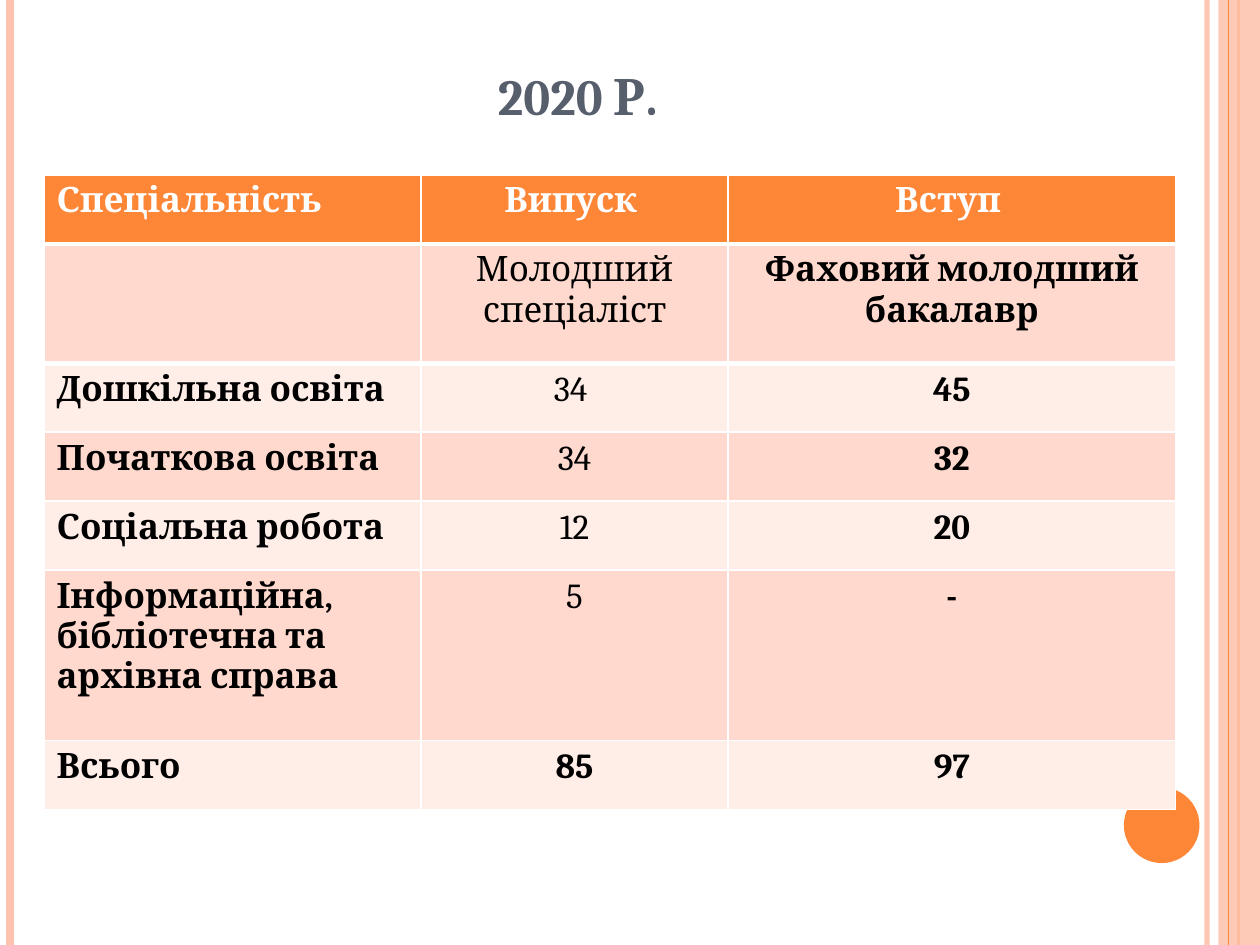
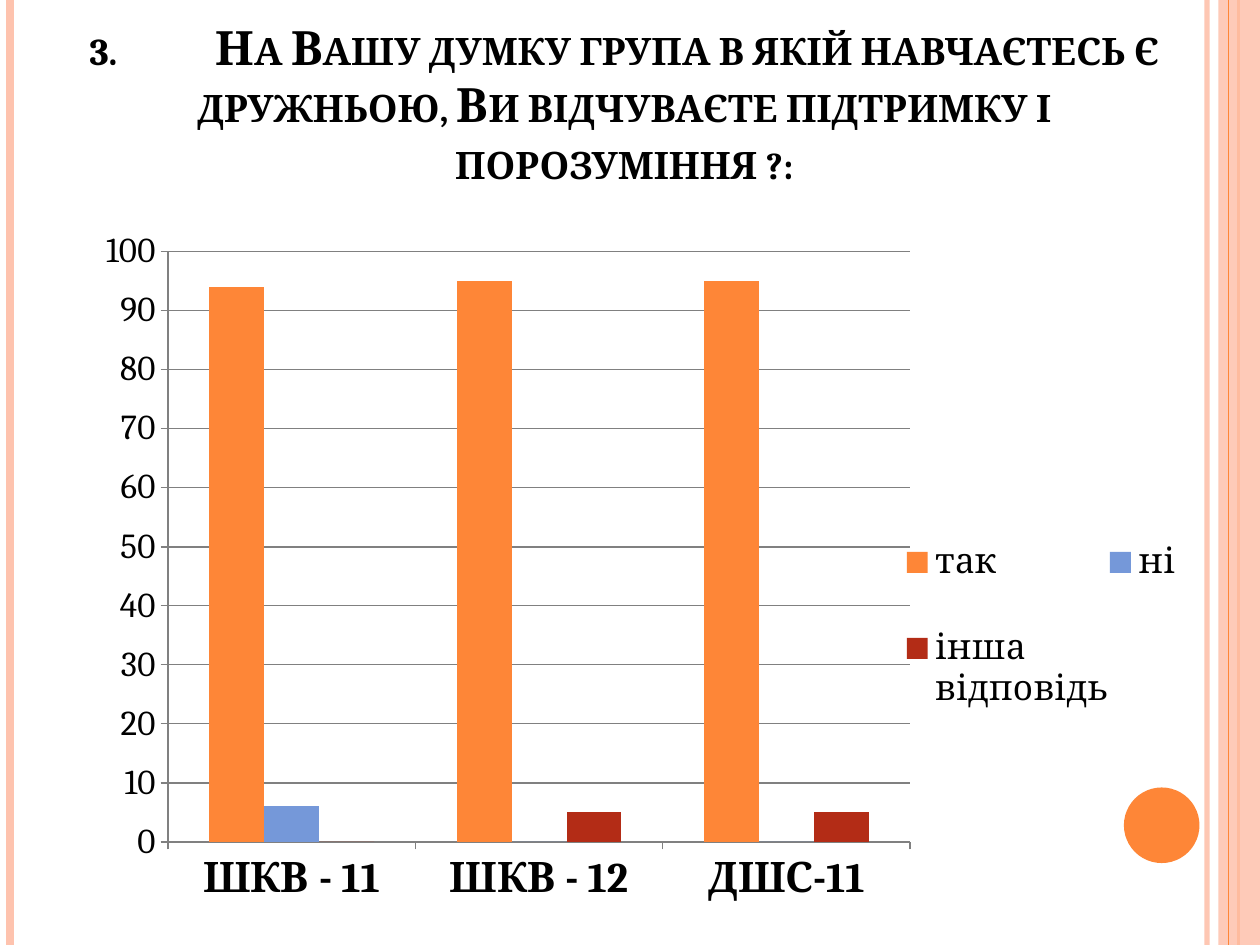
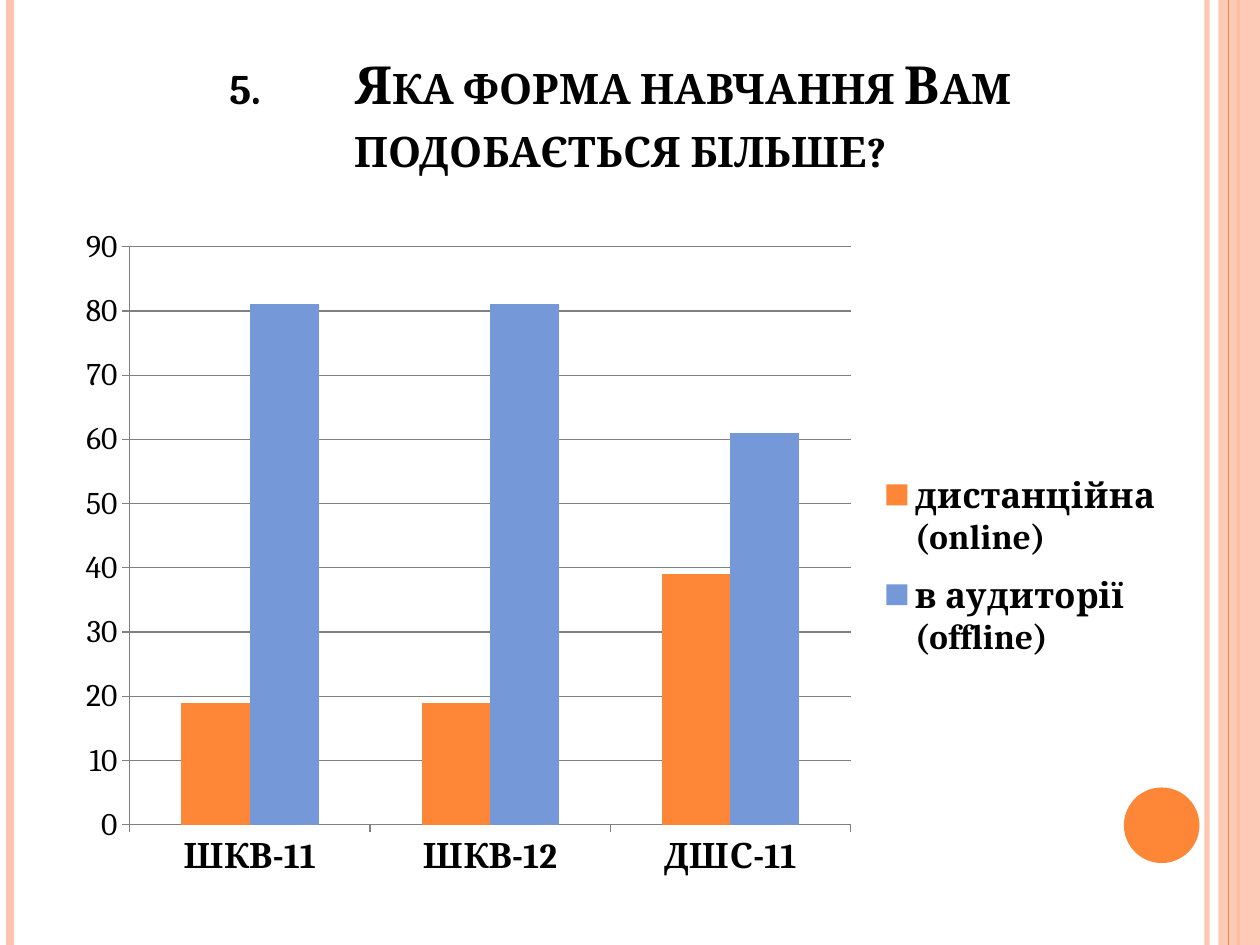
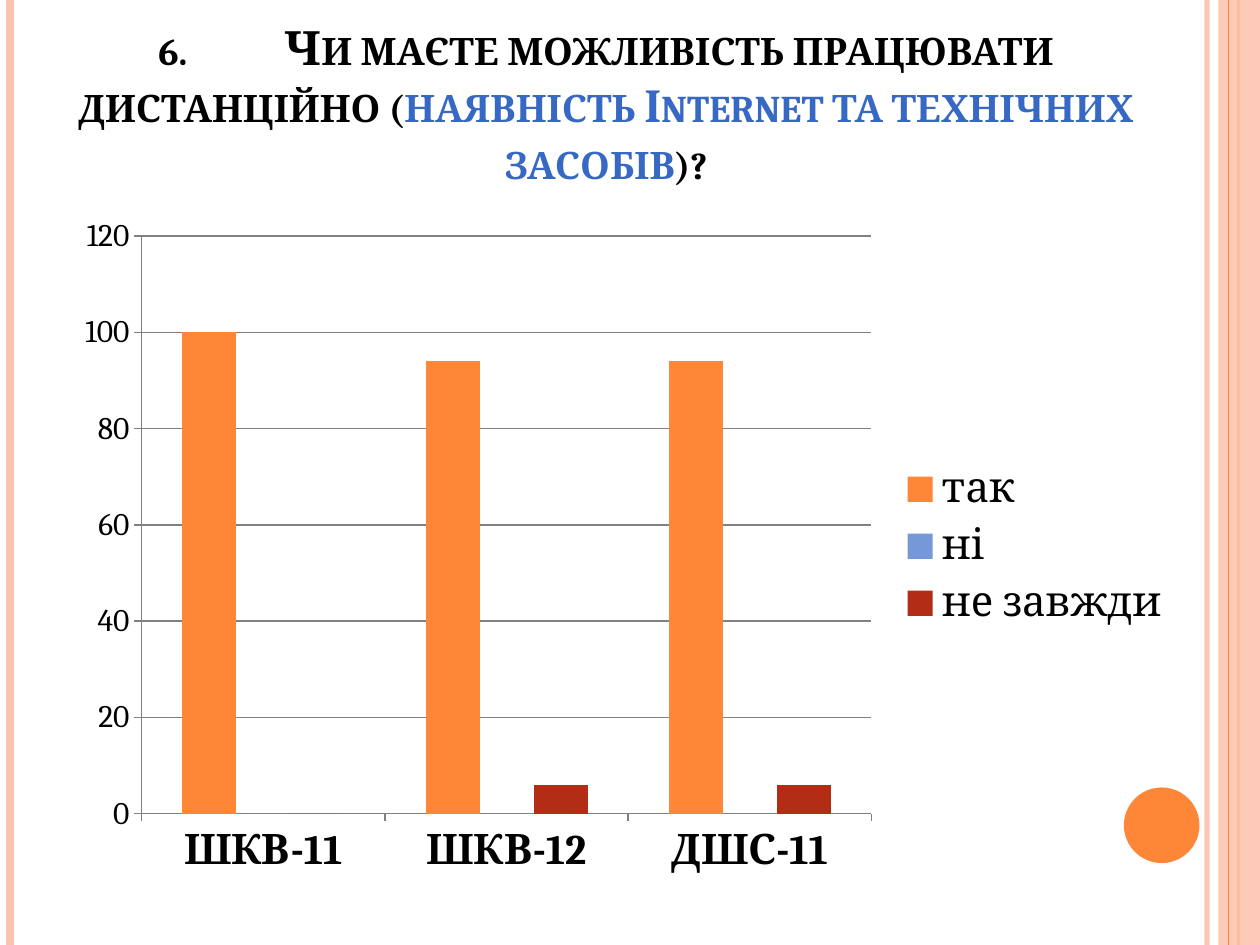
import pptx
import pptx.chart.data
import pptx.dml.color
import pptx.enum.chart
import pptx.enum.shapes
import pptx.enum.text
import pptx.oxml
import pptx.oxml.ns
import pptx.util

UNIT = pptx.util.Inches(0.1)
COLUMNS, ROWS = 100, 75
TITLE_TAB = 10
FONT = "Cambria"
ORANGE, PEACH, BLUE, RED = "FE8637", "FEC3AE", "7598D9", "B32C16"
SLATE, LINK, BLACK, WHITE, GREY = "575F6D", "3668C4", "000000", "FFFFFF", "808080"
BANDS = "FFEDE8", "FFD9CE"
CENTER = pptx.enum.text.PP_ALIGN.CENTER
LEFT = pptx.enum.text.PP_ALIGN.LEFT

RULES = [
    {"column": 95.8, "color": PEACH, "width": 3, "opacity": 93},
    {"column": 0.8, "color": PEACH, "width": 4.5, "opacity": 100},
    {"column": 98.3, "color": ORANGE, "width": 1.5, "opacity": 100},
    {"column": 97.5, "color": ORANGE, "width": 0.75, "opacity": 100},
]
BAND_BOX = (96.7, 0, 3.3, ROWS)
DISC_BOX = (89.2, 62.5, 6, 6)

TABLE_COLUMNS = [29.9, 24.4, 35.5]
TABLE_ROWS = [5.48, 9.45, 5.48, 5.48, 5.48, 13.5, 5.48]
ADMISSIONS = [
    ("Спеціальність", "Випуск ", "Вступ "),
    ("", "Молодший спеціаліст", "Фаховий молодший бакалавр"),
    ("Дошкільна освіта", "34 ", "45"),
    ("Початкова освіта", "34", "32"),
    ("Соціальна робота", "12", "20"),
    ("Інформаційна, бібліотечна та архівна справа", "5", "-"),
    ("Всього", "85", "97"),
]

SURVEYS = [
    {
        "title_box": (5, 2.1, 89.1, 13.4),
        "title_size": 27,
        "title": [("3.\tНа Вашу думку група в якій навчаєтесь є дружньою, "
                   "Ви відчуваєте підтримку і порозуміння ?:", BLACK)],
        "chart_box": (5.9, 17.8, 87.5, 54.6),
        "groups": ["ШКВ - 11", "ШКВ - 12", "ДШС-11"],
        "answers": [("так", (94, 95, 95)), ("ні", (6, 0, 0)),
                    ("інша відповідь", (0, 5, 5))],
        "scale": (100, 10),
        "sizes": {"value": 20, "category": 24, "legend": 20},
        "legend_bold": False,
        "plot_percent": (8.5, 4, 67.3, 85.8),
        "legend_percent": (75.4, 39.6, 24.8, 37.5),
    },
    {
        "title_box": (5.9, 2.1, 86.7, 12.5),
        "title_size": 30,
        "title": [("5.\tЯка форма навчання Вам подобається більше?", BLACK)],
        "chart_box": (5, 17, 88.3, 53.8),
        "groups": ["ШКВ-11", "ШКВ-12", "ДШС-11"],
        "answers": [("дистанційна (online)", (19, 19, 39)),
                    ("в аудиторії (offline)", (81, 81, 61))],
        "scale": (90, 10),
        "sizes": {"value": 18, "category": 20, "legend": 20},
        "legend_bold": True,
        "plot_percent": (6, 4.8, 64.8, 85.3),
        "legend_percent": (73.4, 36.1, 25.4, 32.2),
    },
    {
        "title_box": (2.8, 3, 90.6, 12.5),
        "title_size": 27,
        "title": [("6.\tЧи маєте можливість працювати дистанційно (", BLACK),
                  ("наявність Internet та технічних засобів", LINK),
                  (")?", BLACK)],
        "chart_box": (5, 16.2, 89.1, 54.3),
        "groups": ["ШКВ-11", "ШКВ-12", "ДШС-11"],
        "answers": [("так", (100, 94, 94)), ("ні", (0, 0, 0)),
                    ("не завжди", (0, 6, 6))],
        "scale": (120, 20),
        "sizes": {"value": 18, "category": 24, "legend": 24},
        "legend_bold": False,
    },
]


def rgb(color):
    """Turn a hex string into a colour."""
    return pptx.dml.color.RGBColor.from_string(color)


def grid(*lengths):
    """Turn counts of grid units into slide lengths."""
    return [round(length * UNIT) for length in lengths]


def assign(target, values):
    """Set every attribute named in a dict."""
    for name, value in values.items():
        setattr(target, name, value)


def add_element(parent, tag, index=None, **values):
    """Insert a new XML element with attributes and return it."""
    child = parent.makeelement(pptx.oxml.ns.qn(tag),
                               {name: str(value) for name, value in values.items()})
    parent.insert(len(parent) if index is None else index, child)
    return child


def format_font(font, size, color=BLACK, bold=False):
    """Give a font the deck's face with a size, colour and weight."""
    assign(font, {"name": FONT, "size": pptx.util.Pt(size), "bold": bold})
    font.color.rgb = rgb(color)


def set_opacity(shape, percent):
    """Make the colours of a shape partly transparent."""
    for color in list(shape.element.spPr.iter(pptx.oxml.ns.qn("a:srgbClr"))):
        add_element(color, "a:alpha", val=percent * 1000)


def add_rule(page, column, color, width, opacity):
    """Draw one full-height vertical rule."""
    rule = page.shapes.add_connector(
        pptx.enum.shapes.MSO_CONNECTOR.STRAIGHT, *grid(column, 0, column, ROWS))
    rule.line.color.rgb = rgb(color)
    rule.line.width = pptx.util.Pt(width)
    add_element(rule.element.spPr, "a:effectLst")
    if opacity < 100:
        set_opacity(rule, opacity)
    return rule


def add_solid(page, kind, box, color):
    """Draw a plain filled shape without outline."""
    solid = page.shapes.add_shape(kind, *grid(*box))
    solid.shadow.inherit = False
    solid.fill.solid()
    solid.fill.fore_color.rgb = rgb(color)
    solid.line.fill.background()
    return solid


def decorate_layout(layout, page):
    """Draw the rules, band and disc on a page and move them to its layout."""
    rules = [add_rule(page, **rule) for rule in RULES]
    band = add_solid(page, pptx.enum.shapes.MSO_SHAPE.RECTANGLE, BAND_BOX, PEACH)
    set_opacity(band, 87)
    disc = add_solid(page, pptx.enum.shapes.MSO_SHAPE.OVAL, DISC_BOX, ORANGE)
    for part in (*rules[:3], band, rules[3], disc):
        layout.shapes.element.append(part.element)


def clear_footers(layout):
    """Remove every layout placeholder except the title."""
    for holder in list(layout.placeholders):
        if holder.placeholder_format.idx:
            holder.element.getparent().remove(holder.element)


def fill_title(page, box, spans, size):
    """Write the title in small capitals with a tab after its number."""
    title = page.shapes.title
    assign(title, dict(zip(("left", "top", "width", "height"), grid(*box))))
    frame = title.text_frame
    assign(frame, {"word_wrap": True,
                   "auto_size": pptx.enum.text.MSO_AUTO_SIZE.NONE,
                   "vertical_anchor": pptx.enum.text.MSO_ANCHOR.BOTTOM})
    para = frame.paragraphs[0]
    para.alignment = CENTER
    tabs = add_element(para._p.get_or_add_pPr(), "a:tabLst")
    add_element(tabs, "a:tab", pos=grid(TITLE_TAB)[0], algn="l")
    for text, color in spans:
        span = para.add_run()
        span.text = text
        format_font(span.font, size, color, bold=True)
        span.font._element.set("cap", "small")


def add_border(cell, side, width):
    """Draw a white border on one side of a cell."""
    border = add_element(cell._tc.get_or_add_tcPr(), "a:" + side, 0,
                         w=pptx.util.Pt(width))
    add_element(add_element(border, "a:solidFill"), "a:srgbClr", val=WHITE)


def fill_cell(cell, text, row, column):
    """Write and colour one table cell according to its place."""
    header, total = row == 0, row == len(ADMISSIONS) - 1
    cell.fill.solid()
    cell.fill.fore_color.rgb = rgb(ORANGE if header else BANDS[row % 2])
    if header:
        add_border(cell, "lnB", 3)
    if row == 1:
        add_border(cell, "lnT", 3)
    para = cell.text_frame.paragraphs[0]
    para.alignment = CENTER if column else LEFT
    if text:
        span = para.add_run()
        span.text = text
        format_font(span.font, 20, WHITE if header else BLACK,
                    bold=header or total or column != 1)


def add_admissions(page, left, top):
    """Place the table of graduates and entrants."""
    box = grid(left, top, sum(TABLE_COLUMNS), sum(TABLE_ROWS))
    table = page.shapes.add_table(len(TABLE_ROWS), len(TABLE_COLUMNS), *box).table
    for column, width in zip(table.columns, grid(*TABLE_COLUMNS)):
        column.width = width
    for row, height in zip(table.rows, grid(*TABLE_ROWS)):
        row.height = height
    for row, texts in enumerate(ADMISSIONS):
        for column, text in enumerate(texts):
            fill_cell(table.cell(row, column), text, row, column)


def set_percent(parent, percent, inner=False):
    """Fix the place of a chart part in percent of the chart."""
    layout = parent.find(pptx.oxml.ns.qn("c:layout"))
    if layout is None:
        position = parent.find(pptx.oxml.ns.qn("c:legendPos"))
        index = 0 if position is None else parent.index(position) + 1
        layout = add_element(parent, "c:layout", index)
    values = {"layoutTarget": "inner"} if inner else {}
    values.update({"xMode": "edge", "yMode": "edge"})
    values.update(zip("xywh", (round(share / 100, 3) for share in percent)))
    manual = add_element(layout, "c:manualLayout")
    for name, value in values.items():
        add_element(manual, "c:" + name, val=value)


def format_axes(chart, scale, sizes):
    """Format both axes and the gridlines."""
    value, category = chart.value_axis, chart.category_axis
    outside = pptx.enum.chart.XL_TICK_MARK.OUTSIDE
    maximum, step = scale
    assign(value, {"minimum_scale": 0, "maximum_scale": maximum, "major_unit": step,
                   "has_major_gridlines": True, "major_tick_mark": outside})
    category.major_tick_mark = outside
    for line in (value.format.line, category.format.line, value.major_gridlines.format.line):
        line.color.rgb = rgb(GREY)
        line.width = pptx.util.Pt(0.75)
    format_font(value.tick_labels.font, sizes["value"])
    format_font(category.tick_labels.font, sizes["category"], bold=True)


def add_survey_chart(page, survey):
    """Place the column chart of answers by group."""
    data = pptx.chart.data.CategoryChartData()
    data.categories = survey["groups"]
    for name, values in survey["answers"]:
        data.add_series(name, values)
    sizes = survey["sizes"]
    chart = page.shapes.add_chart(
        pptx.enum.chart.XL_CHART_TYPE.COLUMN_CLUSTERED,
        *grid(*survey["chart_box"]), data).chart
    assign(chart, {"has_title": False, "has_legend": True})
    format_font(chart.font, sizes["value"])
    format_axes(chart, survey["scale"], sizes)
    plot = chart.plots[0]
    assign(plot, {"gap_width": 150, "vary_by_categories": False})
    for series, color in zip(plot.series, (ORANGE, BLUE, RED)):
        series.format.fill.solid()
        series.format.fill.fore_color.rgb = rgb(color)
    assign(chart.legend, {"position": pptx.enum.chart.XL_LEGEND_POSITION.RIGHT,
                          "include_in_layout": False})
    format_font(chart.legend.font, sizes["legend"], bold=survey["legend_bold"])
    if "plot_percent" in survey:
        area = chart.element.find(".//" + pptx.oxml.ns.qn("c:plotArea"))
        legend = chart.element.find(".//" + pptx.oxml.ns.qn("c:legend"))
        set_percent(area, survey["plot_percent"], inner=True)
        set_percent(legend, survey["legend_percent"])


def build_admissions(page):
    """Build the slide with the yearly table."""
    fill_title(page, (5, 3, 81.7, 7.7), [("2020 р.", SLATE)], 36)
    add_admissions(page, 3.5, 13.9)


def build_survey(page, survey):
    """Build one slide with a question and its chart."""
    fill_title(page, survey["title_box"], survey["title"], survey["title_size"])
    add_survey_chart(page, survey)


def main():
    """Build and save the deck."""
    deck = pptx.Presentation()
    deck.slide_width, deck.slide_height = grid(COLUMNS, ROWS)
    layout = deck.slide_layouts.get_by_name("Title Only")
    clear_footers(layout)
    page = deck.slides.add_slide(layout)
    decorate_layout(layout, page)
    build_admissions(page)
    for survey in SURVEYS:
        build_survey(deck.slides.add_slide(layout), survey)
    deck.save("out.pptx")


if __name__ == "__main__":
    main()
